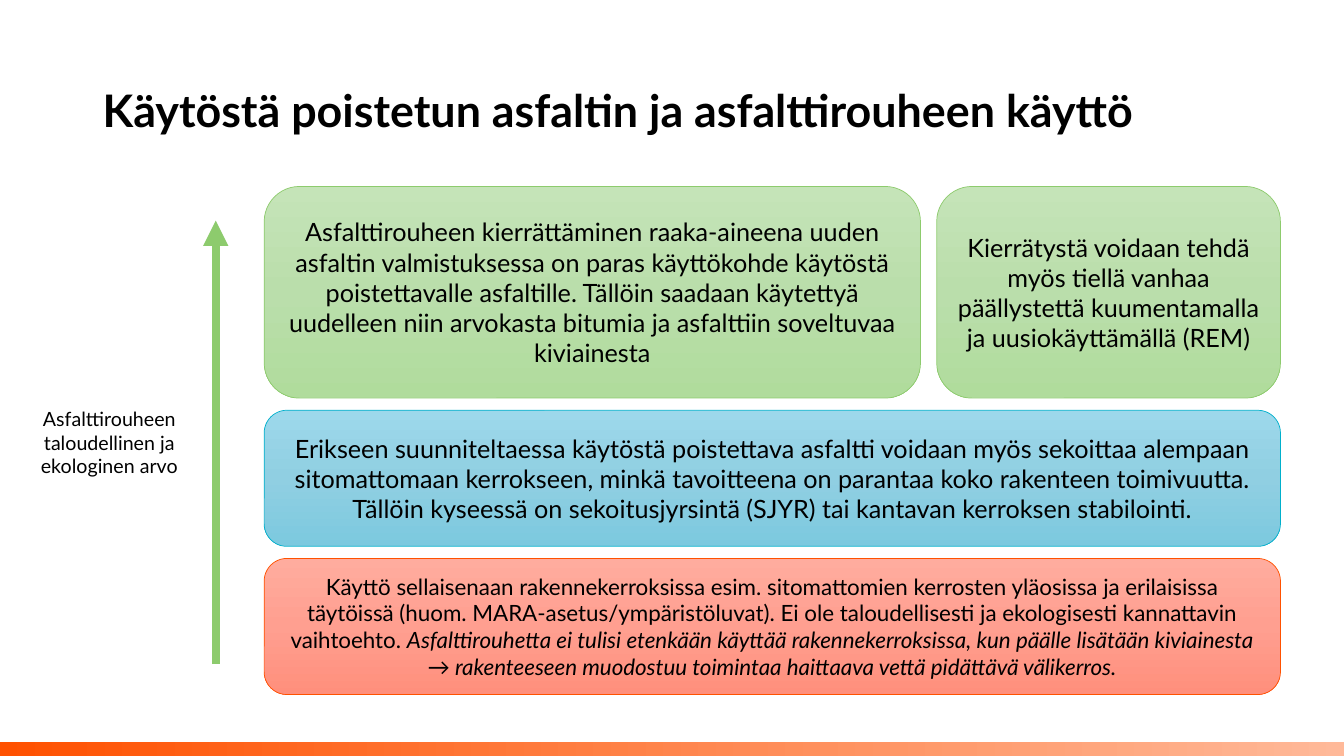
from collections import namedtuple
from dataclasses import dataclass

from lxml.etree import SubElement
from pptx import Presentation
from pptx.dml.color import RGBColor as RGB
from pptx.enum.shapes import MSO_CONNECTOR as Link, MSO_SHAPE as Shape
from pptx.enum.text import MSO_ANCHOR as Anchor, PP_ALIGN as Align
from pptx.oxml.ns import qn
from pptx.util import Inches, Pt

Box = namedtuple("Box", "left top width height")
Tone = namedtuple("Tone", "stops line")


@dataclass(frozen=True)
class Theme:
    font: str = "Lato"
    ink: str = "000000"
    title: int = 32
    body: int = 18
    dense: int = 16
    label: int = 14
    edge: float = 0.5
    shaft: float = 6
    band: tuple = ("FF5100", "FFB999")
    green: Tone = Tone(("C5E4B8", "BADEAB", "B0DC9C"), "8DCB6D")
    blue: Tone = Tone(("9DD8EB", "90CFE2", "7CC9DF"), "00B0CC")
    red: Tone = Tone(("FFAC9E", "FF9F90", "FF8F7C"), "FF5100")


THEME = Theme()

TITLE = "Käytöstä poistetun asfaltin ja asfalttirouheen käyttö"
VALUE = "Asfalttirouheen taloudellinen ja ekologinen arvo"
RECYCLE = (
    "Asfalttirouheen kierrättäminen raaka-aineena uuden asfaltin "
    "valmistuksessa on paras käyttökohde käytöstä poistettavalle asfaltille. "
    "Tällöin saadaan käytettyä uudelleen niin arvokasta bitumia ja "
    "asfalttiin soveltuvaa kiviainesta"
)
ON_ROAD = (
    "Kierrätystä voidaan tehdä myös tiellä vanhaa päällystettä "
    "kuumentamalla ja uusiokäyttämällä (REM)"
)
MIXING = (
    "Erikseen suunniteltaessa käytöstä poistettava asfaltti voidaan myös "
    "sekoittaa alempaan sitomattomaan kerrokseen, minkä tavoitteena on "
    "parantaa koko rakenteen toimivuutta. Tällöin kyseessä on "
    "sekoitusjyrsintä (SJYR) tai kantavan kerroksen stabilointi."
)
AS_IS = (
    "Käyttö sellaisenaan rakennekerroksissa esim. sitomattomien kerrosten "
    "yläosissa ja erilaisissa täytöissä (huom. MARA-asetus/ympäristöluvat). "
    "Ei ole taloudellisesti ja ekologisesti kannattavin vaihtoehto. "
)
WARNING = (
    "Asfalttirouhetta ei tulisi etenkään käyttää rakennekerroksissa, kun "
    "päälle lisätään kiviainesta → rakenteeseen muodostuu toimintaa "
    "haittaava vettä pidättävä välikerros."
)


def place(box):
    return [Inches(v) for v in box]


def blend(shape, colors, angle):
    """Fill with evenly spaced stops; angle is counter-clockwise."""
    shape.fill.gradient()
    shape.fill.gradient_angle = angle
    stops = shape.fill._xPr.find(qn("a:gradFill")).find(qn("a:gsLst"))
    stops.clear()
    for i, color in enumerate(colors):
        pos = round(100000 * i / (len(colors) - 1))
        stop = SubElement(stops, qn("a:gs"), pos=str(pos))
        SubElement(stop, qn("a:srgbClr"), val=color)


def write(shape, text, size, align, anchor=Anchor.MIDDLE):
    frame = shape.text_frame
    frame.word_wrap = True
    frame.vertical_anchor = anchor
    frame.text = text
    para = frame.paragraphs[0]
    para.alignment = align
    style(para.runs[0], size)
    return para


def style(run, size):
    run.font.name = THEME.font
    run.font.size = Pt(size)
    run.font.color.rgb = RGB.from_string(THEME.ink)


def add_band(slide, box):
    band = slide.shapes.add_shape(Shape.RECTANGLE, *place(box))
    band.shadow.inherit = False
    band.line.fill.background()
    blend(band, THEME.band, 0)


def add_title(slide, box):
    title = slide.shapes.add_textbox(*place(box))
    para = write(title, TITLE, THEME.title, Align.LEFT)
    para.line_spacing = 0.9
    para.runs[0].font.bold = True


def add_card(slide, box, tone, text, size=THEME.body):
    card = slide.shapes.add_shape(Shape.ROUNDED_RECTANGLE, *place(box))
    card.shadow.inherit = False
    blend(card, tone.stops, 270)
    card.line.color.rgb = RGB.from_string(tone.line)
    card.line.width = Pt(THEME.edge)
    return write(card, text, size, Align.CENTER)


def add_cards(slide, box):
    """Stack the uses from the most to the least valuable."""
    gap, side, tall = 0.12, 3.41, 2.1
    low = (box.height - tall - 2 * gap) / 2
    wide = box.width - side - 0.16
    add_card(slide, Box(box.left, box.top, wide, tall), THEME.green, RECYCLE)
    right = box.left + box.width - side
    add_card(slide, Box(right, box.top, side, tall), THEME.green, ON_ROAD)

    row = Box(box.left, box.top + tall + gap, box.width, low)
    add_card(slide, row, THEME.blue, MIXING)
    row = row._replace(top=row.top + low + gap)
    para = add_card(slide, row, THEME.red, AS_IS, THEME.dense)
    run = para.add_run()
    run.text = WARNING
    style(run, THEME.dense)
    run.font.italic = True


def add_scale(slide, box):
    """Draw the value arrow on the right edge, its label at the left."""
    x = box.left + box.width
    ends = place((x, box.top + box.height, x, box.top))
    arrow = slide.shapes.add_connector(Link.STRAIGHT, *ends)
    arrow.line.color.rgb = RGB.from_string(THEME.green.line)
    arrow.line.width = Pt(THEME.shaft)
    SubElement(arrow.line._get_or_add_ln(), qn("a:tailEnd"), type="triangle")
    SubElement(arrow._element.spPr, qn("a:effectLst"))

    area = Box(box.left, box.top + 1.8, box.width - 0.12, 0.81)
    label = slide.shapes.add_textbox(*place(area))
    write(label, VALUE, THEME.label, Align.CENTER, Anchor.TOP)


def main():
    deck = Presentation()
    deck.slide_width, deck.slide_height = Inches(13.33), Inches(7.5)
    slide = deck.slides.add_slide(deck.slide_layouts[6])
    add_band(slide, Box(0, 7.36, 13.33, 0.14))
    add_title(slide, Box(0.92, 0.4, 10.77, 1.45))
    add_cards(slide, Box(2.62, 1.85, 10.08, 5.04))
    add_scale(slide, Box(0.15, 2.19, 1.99, 4.4))
    deck.save("out.pptx")


if __name__ == "__main__":
    main()
